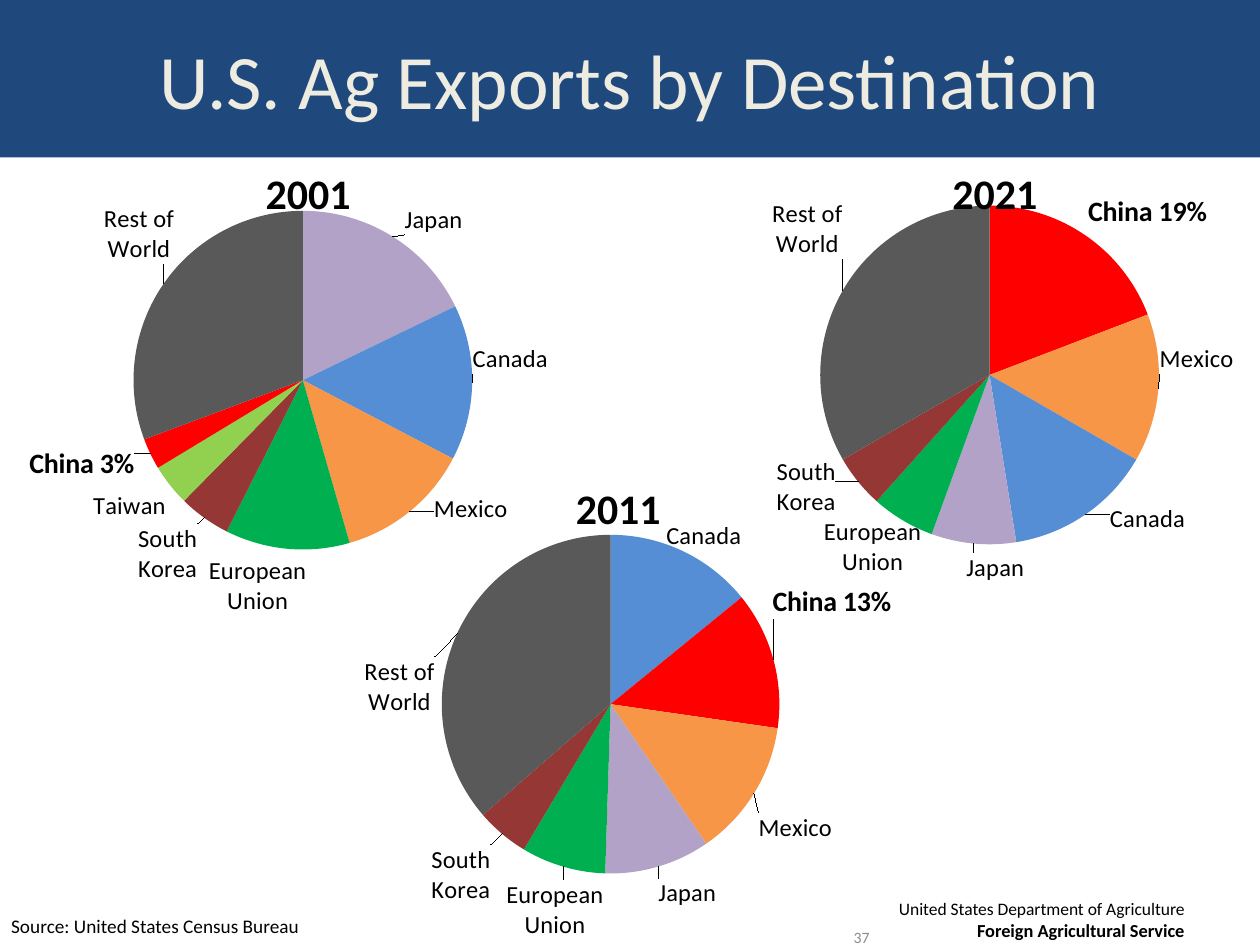
from lxml.etree import SubElement
from pptx import Presentation
from pptx.chart.data import CategoryChartData
from pptx.dml.color import RGBColor
from pptx.enum.chart import XL_CHART_TYPE, XL_LABEL_POSITION
from pptx.enum.text import MSO_ANCHOR, PP_ALIGN
from pptx.oxml import parse_xml
from pptx.oxml.ns import nsdecls, qn
from pptx.util import Pt

FONT = "Calibri"
HEADING = "U.S. Ag Exports by Destination"
COLORS = {
    "Japan": "B3A2C7", "Canada": "558ED5", "Mexico": "F79646",
    "European Union": "00B050", "South Korea": "953735",
    "Taiwan": "92D050", "China": "FF0000", "Rest of World": "595959",
}
HIGHLIGHT = "China"
CHART_WIDTH, CHART_HEIGHT = 344.5, 270
# country: (share, label shift right, label shift down)
YEARS = [
    ("2021", 383.8, 90, 0.22, 0.102,
     {"China": (19, -1, 0), "Mexico": (14, -3.5, -17), "Canada": (14, 11.5, -9.5),
      "Japan": (8, 29.5, 1), "European Union": (6, 13, -5.5),
      "South Korea": (5, -9.5, -17), "Rest of World": (33, 3.5, -15.5)}),
    ("2001", -8.6, 90, 0.22, 0.113,
     {"Japan": (18, 4.5, 2.5), "Canada": (15, -4, -13.5), "Mexico": (13, 11, -13.5),
      "European Union": (12, 11.5, 0), "South Korea": (5, -1.5, 0),
      "Taiwan": (4, 1, 0.5), "China": (3, -5.5, -5.5),
      "Rest of World": (31, 9.5, -8.5)}),
    ("2011", 169.2, 270, 0.216, 0.132,
     {"Canada": (14, -11.5, 4), "China": (13, -4.5, -21.5), "Mexico": (13, -1, 9),
      "Japan": (10, -1, 2.5), "European Union": (8, 24.5, 3.5),
      "South Korea": (5, -4, 3), "Rest of World": (36, -9, 49.5)}),
]
NOTES = [
    ((498.2, 509.8, 185.8, 32.4), PP_ALIGN.RIGHT, MSO_ANCHOR.TOP, "000000",
     [("United States Department of Agriculture", 10, False),
      ("Foreign Agricultural Service", 10.5, True)]),
    ((462.2, 519.1, 41.8, 32.4), PP_ALIGN.RIGHT, MSO_ANCHOR.MIDDLE, "8C8C8C",
     [("37", 9, False)]),
    ((-0.7, 519.1, 300.2, 20.9), PP_ALIGN.LEFT, MSO_ANCHOR.TOP, "000000",
     [("Source: United States Census Bureau", 11, False)]),
]


def rgb(value):
    return RGBColor.from_string(value)


def style(font, size, color="000000", bold=False):
    font.name, font.size, font.bold = FONT, Pt(size), bold
    font.color.rgb = rgb(color)


def manual_layout(**settings):
    inner = "".join(f'<c:{key} val="{val}"/>' for key, val in settings.items())
    return parse_xml(f'<c:layout {nsdecls("c")}><c:manualLayout>{inner}'
                     "</c:manualLayout></c:layout>")


def drop_layout(parent):
    for layout in parent.findall(qn("c:layout")):
        parent.remove(layout)


def add_label(series, index, country, right, down):
    highlighted = country == HIGHLIGHT
    label = series.points[index].data_label
    style(label.font, 16 if highlighted else 14, bold=highlighted)
    label.position = XL_LABEL_POSITION.OUTSIDE_END
    xml = next(item for item in series._element.iter(qn("c:dLbl"))
               if item.find(qn("c:idx")).get("val") == str(index))
    drop_layout(xml)
    xml.find(qn("c:idx")).addnext(manual_layout(
        x=round(right / CHART_WIDTH, 4), y=round(down / CHART_HEIGHT, 4)))
    xml.find(qn("c:showVal")).set("val", "0")
    xml.find(qn("c:showCatName")).set("val", "1")
    if highlighted:
        xml.find(qn("c:showPercent")).set("val", "1")
        xml.find(".//" + qn("a:bodyPr")).set("wrap", "none")
        SubElement(xml, qn("c:separator")).text = " "


def add_pie(slide, year, left, top, plot_left, plot_top, countries):
    data = CategoryChartData(number_format="0")
    data.categories = list(countries)
    data.add_series(year, [share for share, _, _ in countries.values()])
    chart = slide.shapes.add_chart(
        XL_CHART_TYPE.PIE, Pt(left), Pt(top),
        Pt(CHART_WIDTH), Pt(CHART_HEIGHT), data).chart
    style(chart.font, 10)
    chart.has_legend = False
    chart.has_title = True
    heading = chart.chart_title.text_frame
    heading.text = year
    style(heading.paragraphs[0].font, 24, bold=True)
    title = chart._chartSpace.find(".//" + qn("c:title"))
    drop_layout(title)
    title.find(qn("c:tx")).addnext(
        manual_layout(xMode="edge", yMode="edge", x=0.453, y=0))
    plot_area = chart._chartSpace.find(".//" + qn("c:plotArea"))
    drop_layout(plot_area)
    plot_area.insert(0, manual_layout(
        layoutTarget="inner", xMode="edge", yMode="edge",
        x=plot_left, y=plot_top, w=0.615, h=0.717))

    plot = chart.plots[0]
    plot.vary_by_categories = True
    series = plot.series[0]
    labels = series.data_labels
    labels.show_value = False
    labels.show_category_name = True
    labels.position = XL_LABEL_POSITION.OUTSIDE_END
    style(labels.font, 14)
    for index, (country, (_, right, down)) in enumerate(countries.items()):
        fill = series.points[index].format.fill
        fill.solid()
        fill.fore_color.rgb = rgb(COLORS[country])
        add_label(series, index, country, right, down)


def add_note(slide, box, align, anchor, color, lines):
    frame = slide.shapes.add_textbox(*map(Pt, box)).text_frame
    frame.word_wrap = True
    frame.vertical_anchor = anchor
    for index, (text, size, bold) in enumerate(lines):
        line = frame.add_paragraph() if index else frame.paragraphs[0]
        line.text, line.alignment = text, align
        style(line.font, size, color, bold)


def main():
    deck = Presentation()
    deck.slide_width, deck.slide_height = Pt(720), Pt(540)
    slide = deck.slides.add_slide(deck.slide_layouts[5])
    banner = slide.shapes.title
    banner.left, banner.top, banner.width, banner.height = map(Pt, (0, 0, 720, 90))
    banner.fill.solid()
    banner.fill.fore_color.rgb = rgb("1F497D")
    banner.text_frame.text = HEADING
    banner.text_frame.vertical_anchor = MSO_ANCHOR.MIDDLE
    heading = banner.text_frame.paragraphs[0]
    heading.alignment = PP_ALIGN.CENTER
    style(heading.font, 44, "EEECE1")
    for pie in YEARS:
        add_pie(slide, *pie)
    for note in NOTES:
        add_note(slide, *note)
    deck.save("out.pptx")


if __name__ == "__main__":
    main()
